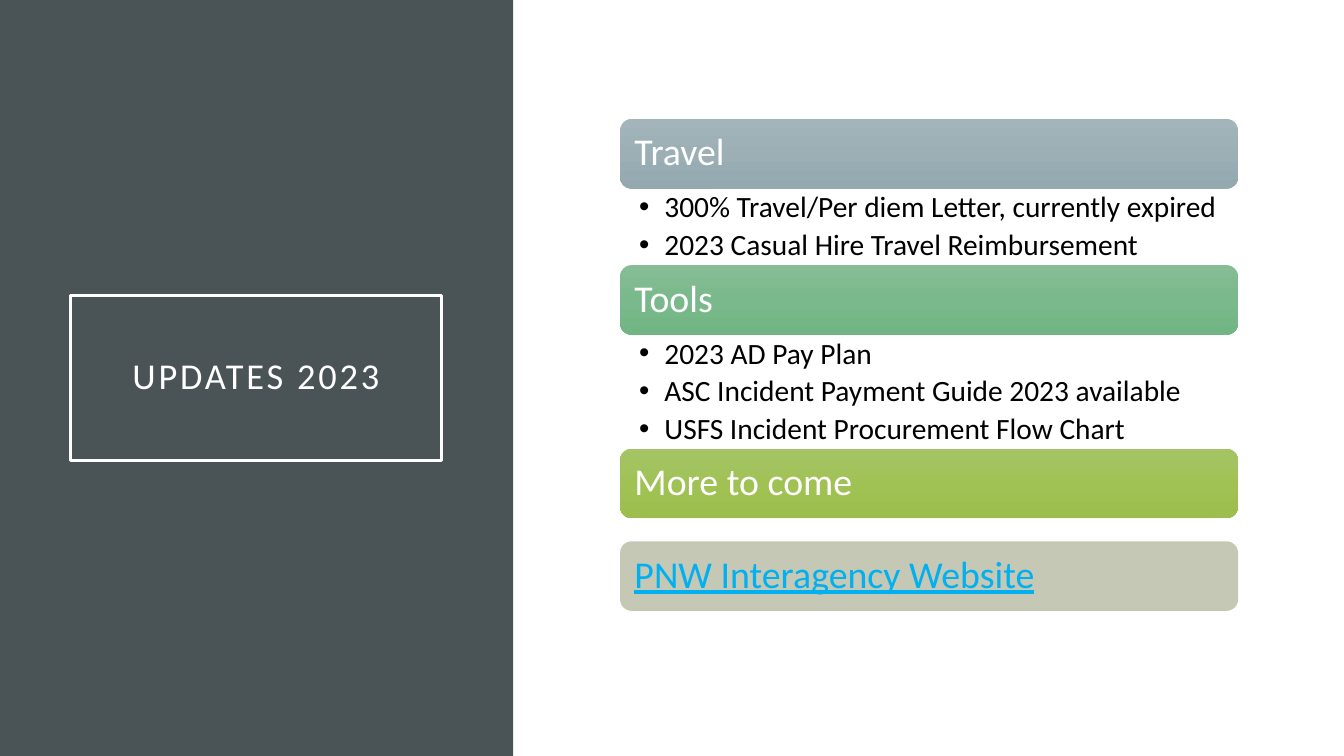
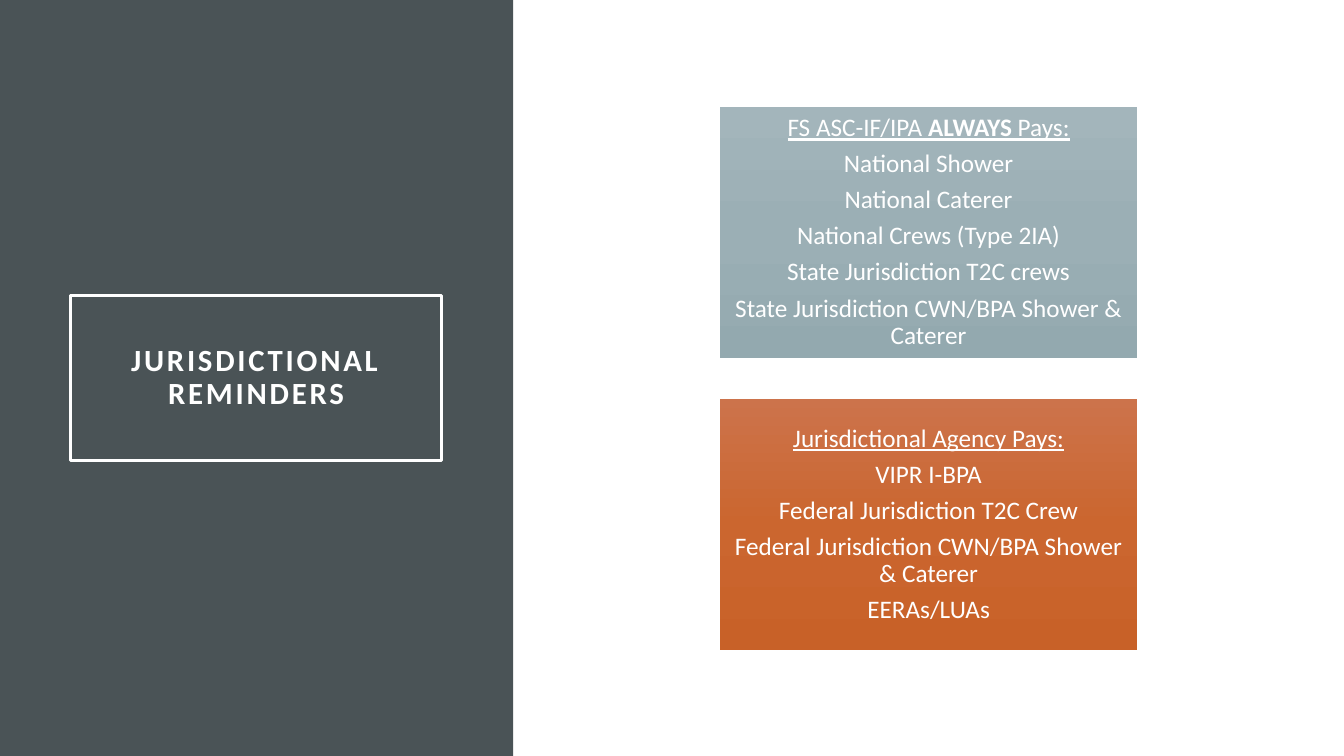
"""Build two slides: the 2023 updates list and the jurisdictional reminders."""
from copy import deepcopy

from lxml.etree import SubElement
from pptx import Presentation
from pptx.dml.color import RGBColor
from pptx.enum.shapes import MSO_SHAPE as SHAPE
from pptx.enum.text import MSO_ANCHOR as ANCHOR, PP_ALIGN as ALIGN
from pptx.oxml.ns import qn
from pptx.util import Inches, Pt

FONT = "Calibri"
WHITE = RGBColor(0xFF, 0xFF, 0xFF)
BLACK = RGBColor(0x00, 0x00, 0x00)
SLATE = RGBColor(0x4A, 0x53, 0x56)
SAND = RGBColor(0xC4, 0xC8, 0xB5)
LINK_BLUE = RGBColor(0x00, 0xB0, 0xF0)
GREY_BLEND = [RGBColor(0xA3, 0xB5, 0xBB), RGBColor(0x9B, 0xAF, 0xB5), RGBColor(0x93, 0xA9, 0xAF)]
GREEN_BLEND = [RGBColor(0x86, 0xBD, 0x95), RGBColor(0x7A, 0xB9, 0x8B), RGBColor(0x72, 0xB5, 0x84)]
LIME_BLEND = [RGBColor(0xA5, 0xC4, 0x66), RGBColor(0xA0, 0xC2, 0x55), RGBColor(0x9B, 0xBE, 0x4D)]
RUST_BLEND = [RGBColor(0xCC, 0x73, 0x4B), RGBColor(0xCB, 0x66, 0x2F), RGBColor(0xC8, 0x61, 0x28)]


def add_panel(page, kind, left, top, width, height, colours, margin=0.0):
    """Add a borderless shape with no fill, one colour or a three-colour vertical blend."""
    panel = page.shapes.add_shape(kind, Inches(left), Inches(top), Inches(width), Inches(height))
    panel.shadow.inherit = False
    panel.line.fill.background()
    if len(colours) == 3:
        panel.fill.gradient()
        panel.fill.gradient_angle = 270
        stop_list = panel._element.spPr.find(".//" + qn("a:gsLst"))
        middle = deepcopy(stop_list[0])
        middle.set("pos", "50000")
        stop_list.insert(1, middle)
        for stop, colour in zip(panel.fill.gradient_stops, colours):
            stop.color.rgb = colour
    elif colours:
        panel.fill.solid()
        panel.fill.fore_color.rgb = colours[0]
    else:
        panel.fill.background()
    frame = panel.text_frame
    frame.word_wrap = True
    frame.vertical_anchor = ANCHOR.MIDDLE
    frame.margin_left = frame.margin_right = Inches(margin)
    frame.margin_top = frame.margin_bottom = Inches(margin)
    return panel


def add_para(frame, spans, size, colour=WHITE, align=ALIGN.LEFT, gap=0.35):
    """Add a paragraph of (text, bold, underline) spans, with a gap relative to the text size."""
    para = frame.add_paragraph() if frame.text else frame.paragraphs[0]
    para.alignment = align
    para.line_spacing = 0.9
    para.space_after = Pt(size * gap)
    for text, bold, underline in spans:
        span = para.add_run()
        span.text = text
        span.font.name = FONT
        span.font.size = Pt(size)
        span.font.color.rgb = colour
        span.font.bold = bold
        span.font.underline = underline
    return para


deck = Presentation()
deck.slide_width = Inches(13.33)
deck.slide_height = Inches(7.5)

pages = []
for title, size, bold in [("UPDATES 2023", 26, False), ("JURISDICTIONAL REMINDERS", 22, True)]:
    page = deck.slides.add_slide(deck.slide_layouts[6])
    add_panel(page, SHAPE.RECTANGLE, 0, 0, 5.09, 7.5, [SLATE])
    title_box = add_panel(page, SHAPE.RECTANGLE, 0.7, 2.93, 3.68, 1.64, [], 0.2)
    title_box.line.color.rgb = WHITE
    title_box.line.width = Pt(2.5)
    para = add_para(title_box.text_frame, [(title, bold, False)], size, align=ALIGN.CENTER, gap=0)
    para.runs[0].font._element.set("spc", "200")
    pages.append(page)
updates, reminders = pages

BAR_LEFT, BAR_WIDTH, BAR_HEIGHT = 6.15, 6.13, 0.69
sections = [
    ("Travel", GREY_BLEND, WHITE, 0.76, [
        "300% Travel/Per diem Letter, currently expired",
        "2023 Casual Hire Travel Reimbursement",
    ]),
    ("Tools", GREEN_BLEND, WHITE, 1.13, [
        "2023 AD Pay Plan",
        "ASC Incident Payment Guide 2023 available",
        "USFS Incident Procurement Flow Chart",
    ]),
    ("More to come", LIME_BLEND, WHITE, 0.23, []),
    ("PNW Interagency Website", [SAND], LINK_BLUE, 0, []),
]
top = 1.18
for heading, colours, text_colour, space_below, items in sections:
    bar = add_panel(updates, SHAPE.ROUNDED_RECTANGLE, BAR_LEFT, top, BAR_WIDTH, BAR_HEIGHT, colours, 0.11)
    add_para(bar.text_frame, [(heading, False, text_colour == LINK_BLUE)], 27, text_colour)
    top += BAR_HEIGHT
    if items:
        box = updates.shapes.add_textbox(
            Inches(BAR_LEFT), Inches(top), Inches(BAR_WIDTH), Inches(space_below))
        frame = box.text_frame
        frame.word_wrap = True
        frame.margin_left, frame.margin_right = Inches(0.19), Inches(0.21)
        frame.margin_top = frame.margin_bottom = Inches(0.04)
        for item in items:
            para = add_para(frame, [(item, False, False)], 21, BLACK, gap=0.2)
            properties = para._p.get_or_add_pPr()
            properties.set("marL", str(Inches(0.25)))
            properties.set("indent", str(-Inches(0.25)))
            SubElement(properties, qn("a:buFont"), typeface="Arial")
            SubElement(properties, qn("a:buChar"), char="•")
    top += space_below

payers = [
    (GREY_BLEND, [("FS ASC-IF/IPA ", False, True), ("ALWAYS", True, True), (" Pays:", False, True)], [
        "National Shower",
        "National Caterer",
        "National Crews (Type 2IA)",
        "State Jurisdiction T2C crews",
        "State Jurisdiction CWN/BPA Shower & Caterer",
    ]),
    (RUST_BLEND, [("Jurisdictional Agency Pays:", False, True)], [
        "VIPR I-BPA",
        "Federal Jurisdiction T2C Crew",
        "Federal Jurisdiction CWN/BPA Shower & Caterer",
        "EERAs/LUAs",
    ]),
]
for index, (colours, heading, items) in enumerate(payers):
    card = add_panel(reminders, SHAPE.RECTANGLE, 7.14, 1.06 + index * 2.9, 4.14, 2.49, colours, 0.07)
    for spans in [heading] + [[(item, False, False)] for item in items]:
        add_para(card.text_frame, spans, 18, align=ALIGN.CENTER)

deck.save("out.pptx")
